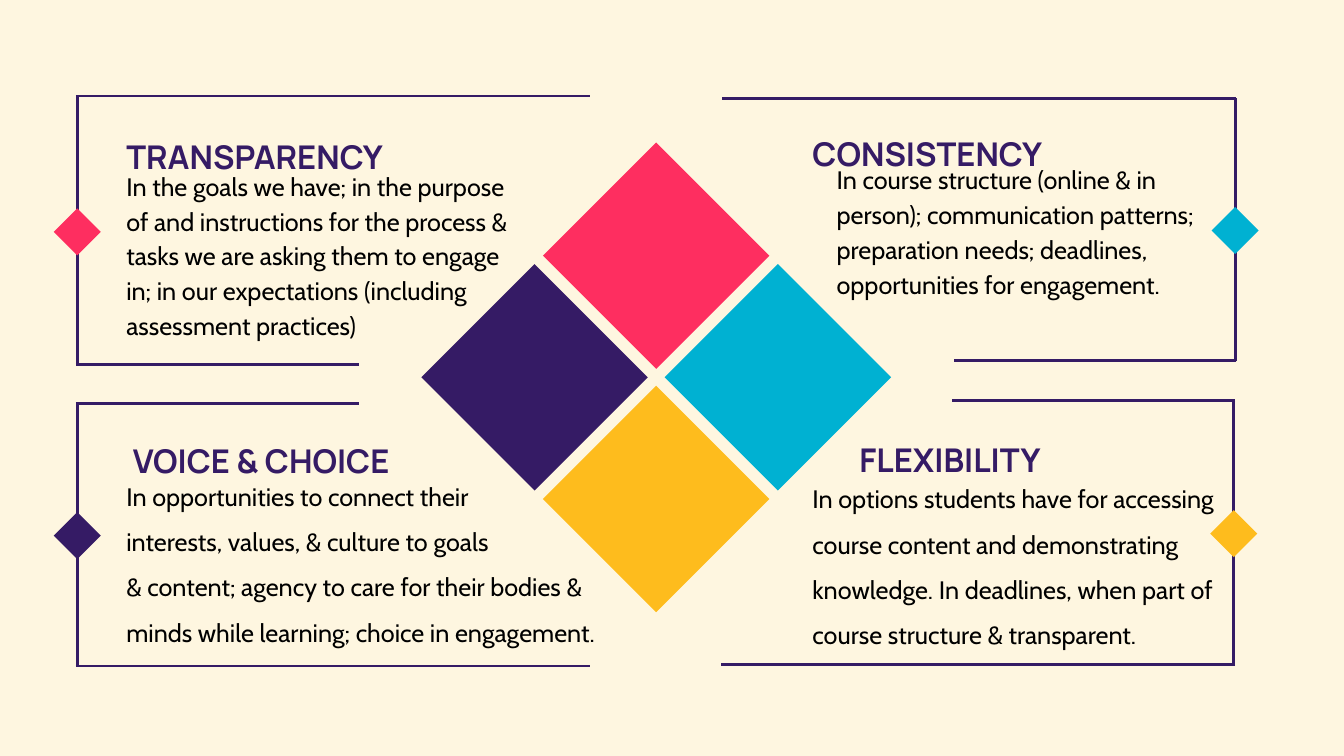
from pptx import Presentation
from pptx import util as u
from pptx.dml.color import RGBColor
from pptx.enum import shapes, text
from pptx.oxml.ns import qn
from lxml import etree

PX = 9144  # 100 px to the inch

CREAM = RGBColor(0xFE, 0xF6, 0xE0)
PINK = RGBColor(0xFE, 0x2E, 0x60)
YELLOW = RGBColor(0xFE, 0xBC, 0x1D)
CYAN = RGBColor(0x00, 0xB1, 0xD2)
PURPLE = RGBColor(0x35, 0x1B, 0x65)
BLACK = RGBColor(0, 0, 0)

DIAMOND, MARKER = 337, 70
SHORT_EDGE = 419

# Text boxes are (left, top, width, height) relative to their panel.
PANELS = [
    dict(box=(115, 143, 763, 400), color=PINK, spine="left", long_edge="top",
         heading="TRANSPARENCY", heading_box=(73, 31, 448, 59),
         body=["In the goals we have; in the purpose of and instructions for the "
               "process & tasks we are asking them to engage in; in our "
               "expectations (including assessment practices)"],
         body_box=(73, 105, 569, 255), spacing=1.15),
    dict(box=(1075, 146, 763, 391), color=CYAN, spine="right", long_edge="top",
         heading="CONSISTENCY", heading_box=(134, 24, 350, 59),
         body=["In course structure (online & in person); communication patterns; "
               "preparation needs; deadlines, opportunities for engagement."],
         body_box=(170, 92, 557, 202), spacing=1.15),
    dict(box=(115, 600, 763, 391), color=PURPLE, spine="left", long_edge="bottom",
         heading=" VOICE & CHOICE", heading_box=(73, 27, 631, 59),
         body=["In opportunities to connect their",
               "interests, values, & culture to goals",
               "& content; agency to care for their bodies & minds while learning; "
               "choice in engagement."],
         body_box=(73, 93, 701, 250), spacing=1.5),
    dict(box=(1073, 596, 763, 393), color=YELLOW, spine="right", long_edge="bottom",
         heading=" FLEXIBILITY", heading_box=(196, 30, 299, 59),
         body=["In options students have for accessing course content and "
               "demonstrating knowledge. In deadlines, when part of course "
               "structure & transparent."],
         body_box=(136, 101, 606, 250), spacing=1.5),
]


def add_text(slide, paragraphs, box, *, font, size, color, bold=False, spacing=1.5):
    frame = slide.shapes.add_textbox(*(n * PX for n in box)).text_frame
    frame.margin_left = frame.margin_top = frame.margin_right = frame.margin_bottom = 0
    frame.word_wrap = True
    frame.auto_size = text.MSO_AUTO_SIZE.SHAPE_TO_FIT_TEXT
    for i, content in enumerate(paragraphs):
        paragraph = frame.paragraphs[0] if i == 0 else frame.add_paragraph()
        paragraph.line_spacing = spacing
        run = paragraph.add_run()
        run.text = content
        run.font.name, run.font.size, run.font.bold = font, u.Pt(size), bold
        run.font.color.rgb = color


def add_line(slide, x1, y1, x2, y2):
    line = slide.shapes.add_connector(
        shapes.MSO_CONNECTOR.STRAIGHT, x1 * PX, y1 * PX, x2 * PX, y2 * PX)
    line.line.color.rgb = PURPLE
    line.line.width = u.Pt(3)
    etree.SubElement(line._element.spPr, qn("a:effectLst"))


def add_diamond(slide, center_x, center_y, size, color):
    shape = slide.shapes.add_shape(
        shapes.MSO_SHAPE.DIAMOND, (center_x - size // 2) * PX,
        (center_y - size // 2) * PX, size * PX, size * PX)
    shape.shadow.inherit = False
    shape.fill.solid()
    shape.fill.fore_color.rgb = color
    shape.line.fill.background()


def add_diamond_cluster(slide, box):
    """Four diamonds touching the middles of the sides of the box."""
    left, top, width, height = box
    x, y = left + width // 2, top + height // 2
    reach = (width - DIAMOND) // 2
    for dx, dy, color in [(0, -1, PINK), (0, 1, YELLOW), (1, 0, CYAN), (-1, 0, PURPLE)]:
        add_diamond(slide, x + dx * reach, y + dy * reach, DIAMOND, color)


def add_panel(slide, box, color, spine, long_edge, heading, heading_box,
              body, body_box, spacing):
    """Open bracket with a marker on its spine, a heading and a body."""
    left, top, width, height = box
    bottom = top + height

    def inside(part):
        return left + part[0], top + part[1], part[2], part[3]

    add_text(slide, [heading], inside(heading_box),
             font="Manrope", size=35, color=PURPLE, bold=True)
    add_text(slide, body, inside(body_box),
             font="Cabin", size=27, color=BLACK, spacing=spacing)

    spine_x, inward = (left, 1) if spine == "left" else (left + width, -1)
    for edge, y in [("top", top), ("bottom", bottom)]:
        length = width if edge == long_edge else SHORT_EDGE
        add_line(slide, spine_x - 2 * inward, y, spine_x + inward * length, y)
    add_line(slide, spine_x, top, spine_x, bottom)
    add_diamond(slide, spine_x, top + height // 2 + 2, MARKER, color)


def main():
    presentation = Presentation()
    presentation.slide_width, presentation.slide_height = 2000 * PX, 1125 * PX
    slide = presentation.slides.add_slide(presentation.slide_layouts[6])
    slide.background.fill.solid()
    slide.background.fill.fore_color.rgb = CREAM

    add_diamond_cluster(slide, (626, 211, 700, 700))
    for panel in PANELS:
        add_panel(slide, **panel)
    presentation.save("out.pptx")


if __name__ == "__main__":
    main()
